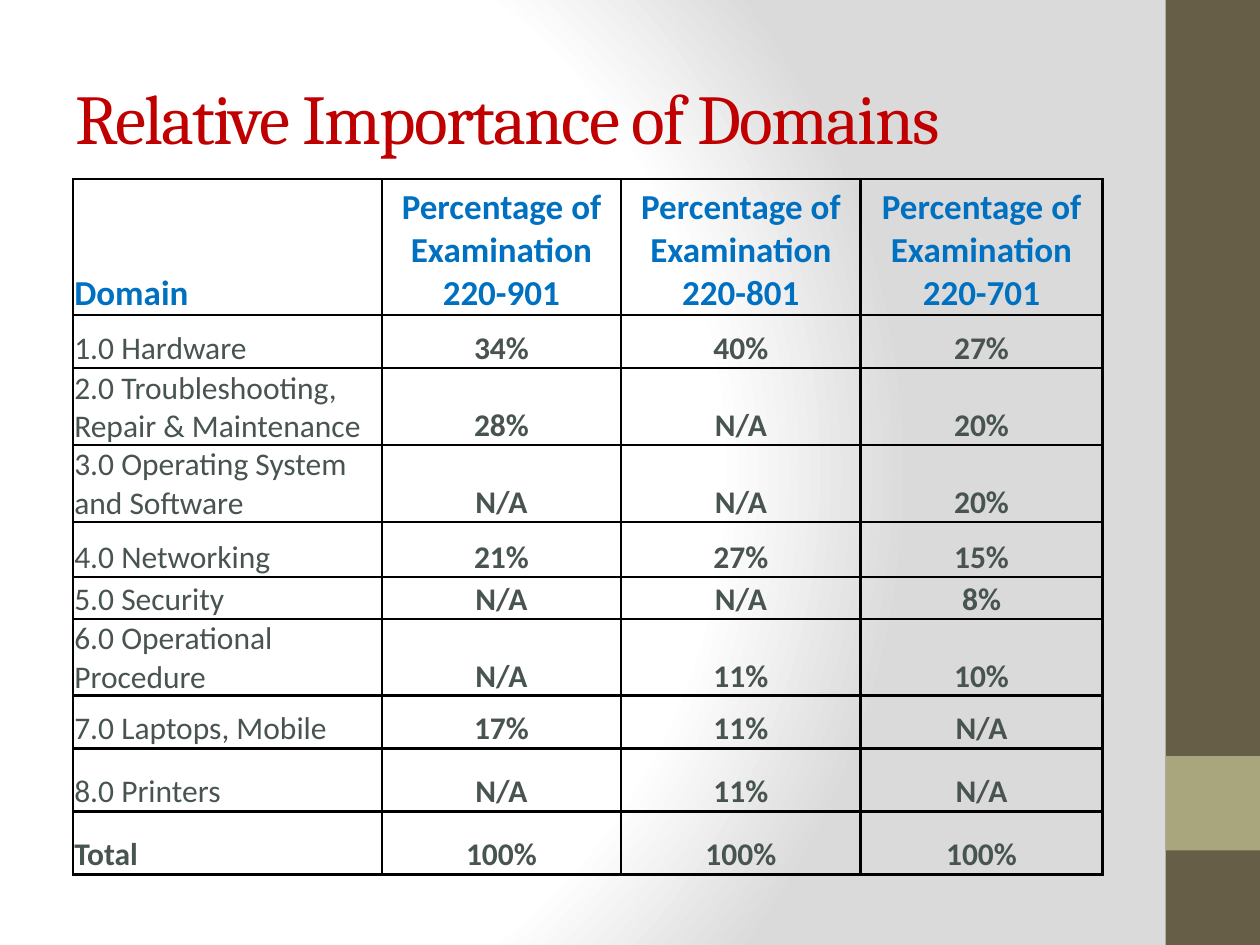
from dataclasses import dataclass

from pptx import Presentation
from pptx import util as u
from pptx.dml.color import RGBColor
from pptx.enum import shapes, text
from pptx.oxml import parse_xml
from pptx.oxml.ns import nsdecls


@dataclass(frozen=True)
class Theme:
    title_font: str = "Cambria"
    body_font: str = "Calibri"
    title: str = "C00000"
    header: str = "0070C0"
    body: str = "48544F"
    border: str = "000000"
    sidebar: str = "675E47"
    accent: str = "A9A57C"
    light: str = "FFFFFF"
    shade: str = "DADADA"
    title_size: int = 40
    header_size: int = 20
    body_size: int = 18
    border_width: float = 1.5


@dataclass(frozen=True)
class Band:
    top: float
    height: float
    color: str


@dataclass(frozen=True)
class Style:
    font: str
    size: int
    color: str
    bold: bool = False


@dataclass(frozen=True)
class Domain:
    name: str
    shares: tuple[str, str, str]
    height: float


THEME = Theme()
TITLE = Style(THEME.title_font, THEME.title_size, THEME.title)
HEADER = Style(THEME.body_font, THEME.header_size, THEME.header, True)
BODY = Style(THEME.body_font, THEME.body_size, THEME.body)
STRONG = Style(THEME.body_font, THEME.body_size, THEME.body, True)

BANDS = [Band(0, 7.5, THEME.sidebar), Band(6, 0.75, THEME.accent)]
EXAMS = ["220-901", "220-801", "220-701"]
COLUMN_WIDTHS = [2.45, 1.9, 1.9, 1.92]
HEADER_HEIGHT = 1.08
DOMAINS = [
    Domain("1.0 Hardware", ("34%", "40%", "27%"), 0.42),
    Domain("2.0 Troubleshooting, Repair & Maintenance", ("28%", "N/A", "20%"), 0.49),
    Domain("3.0 Operating System and Software", ("N/A", "N/A", "20%"), 0.55),
    Domain("4.0 Networking", ("21%", "27%", "15%"), 0.44),
    Domain("5.0 Security", ("N/A", "N/A", "8%"), 0.33),
    Domain("6.0 Operational Procedure", ("N/A", "11%", "10%"), 0.42),
    Domain("7.0 Laptops, Mobile", ("17%", "11%", "N/A"), 0.42),
    Domain("8.0 Printers", ("N/A", "11%", "N/A"), 0.5),
    Domain("Total", ("100%", "100%", "100%"), 0.5),
]


def paint_background(page) -> None:
    """Fill the page with a radial gradient, which python-pptx cannot set itself."""
    page.background.fill.gradient()
    linear = page.element.xpath("./p:cSld/p:bg/p:bgPr/a:gradFill")[0]
    stops = [(0, THEME.light), (75, THEME.light), (100, THEME.shade)]
    stop_xml = "".join(
        f'<a:gs pos="{position * 1000}"><a:srgbClr val="{color}"/></a:gs>'
        for position, color in stops
    )
    radial = parse_xml(
        f'<a:gradFill {nsdecls("a")} rotWithShape="1"><a:gsLst>{stop_xml}</a:gsLst>'
        '<a:path path="circle"><a:fillToRect l="20000" t="50000" r="100000" b="50000"/>'
        "</a:path></a:gradFill>"
    )
    linear.getparent().replace(linear, radial)


def draw_band(page, band: Band) -> None:
    shape = page.shapes.add_shape(
        shapes.MSO_SHAPE.RECTANGLE,
        u.Inches(9.25), u.Inches(band.top), u.Inches(0.75), u.Inches(band.height),
    )
    shape.shadow.inherit = False
    shape.fill.solid()
    shape.fill.fore_color.rgb = RGBColor.from_string(band.color)
    shape.line.fill.background()


def add_span(para, content: str, style: Style):
    span = para.add_run()
    span.text = content
    span.font.name = style.font
    span.font.size = u.Pt(style.size)
    span.font.bold = style.bold
    span.font.color.rgb = RGBColor.from_string(style.color)
    return span


def draw_title(page, content: str) -> None:
    box = page.shapes.add_textbox(
        u.Inches(0.5), u.Inches(0.3), u.Inches(8.33), u.Inches(1.25)
    )
    frame = box.text_frame
    frame.word_wrap = True
    frame.vertical_anchor = text.MSO_ANCHOR.MIDDLE
    span = add_span(frame.paragraphs[0], content, TITLE)
    span.font._element.set("spc", "-100")


def add_borders(cell) -> None:
    properties = cell._tc.get_or_add_tcPr()
    for index, side in enumerate(("lnL", "lnR", "lnT", "lnB")):
        properties.insert(index, parse_xml(
            f'<a:{side} {nsdecls("a")} w="{u.Pt(THEME.border_width)}">'
            f'<a:solidFill><a:srgbClr val="{THEME.border}"/></a:solidFill></a:{side}>'
        ))


def fill_cell(cell, lines: list[str], style: Style, centered: bool) -> None:
    cell.fill.background()
    add_borders(cell)
    cell.vertical_anchor = text.MSO_ANCHOR.BOTTOM
    cell.margin_left = cell.margin_right = cell.margin_top = u.Inches(0.01)
    cell.margin_bottom = 0
    frame = cell.text_frame
    for index, line in enumerate(lines):
        para = frame.add_paragraph() if index else frame.paragraphs[0]
        para.alignment = text.PP_ALIGN.CENTER if centered else text.PP_ALIGN.LEFT
        add_span(para, line, style)


def draw_table(page) -> None:
    heights = [HEADER_HEIGHT] + [domain.height for domain in DOMAINS]
    table = page.shapes.add_table(
        len(heights), len(COLUMN_WIDTHS), u.Inches(0.58), u.Inches(1.42),
        u.Inches(sum(COLUMN_WIDTHS)), u.Inches(sum(heights)),
    ).table
    table.first_row = table.horz_banding = False
    for column, width in zip(table.columns, COLUMN_WIDTHS):
        column.width = u.Inches(width)
    for row, height in zip(table.rows, heights):
        row.height = u.Inches(height)

    fill_cell(table.cell(0, 0), ["Domain"], HEADER, False)
    for column, exam in enumerate(EXAMS, start=1):
        lines = ["Percentage of Examination", exam]
        fill_cell(table.cell(0, column), lines, HEADER, True)
    for row, domain in enumerate(DOMAINS, start=1):
        name_style = STRONG if domain.name == "Total" else BODY
        fill_cell(table.cell(row, 0), [domain.name], name_style, False)
        for column, share in enumerate(domain.shares, start=1):
            fill_cell(table.cell(row, column), [share], STRONG, True)


def main() -> None:
    deck = Presentation()
    deck.slide_width, deck.slide_height = u.Inches(10), u.Inches(7.5)
    page = deck.slides.add_slide(deck.slide_layouts[6])
    paint_background(page)
    for band in BANDS:
        draw_band(page, band)
    draw_title(page, "Relative Importance of Domains")
    draw_table(page)
    deck.save("out.pptx")


if __name__ == "__main__":
    main()
